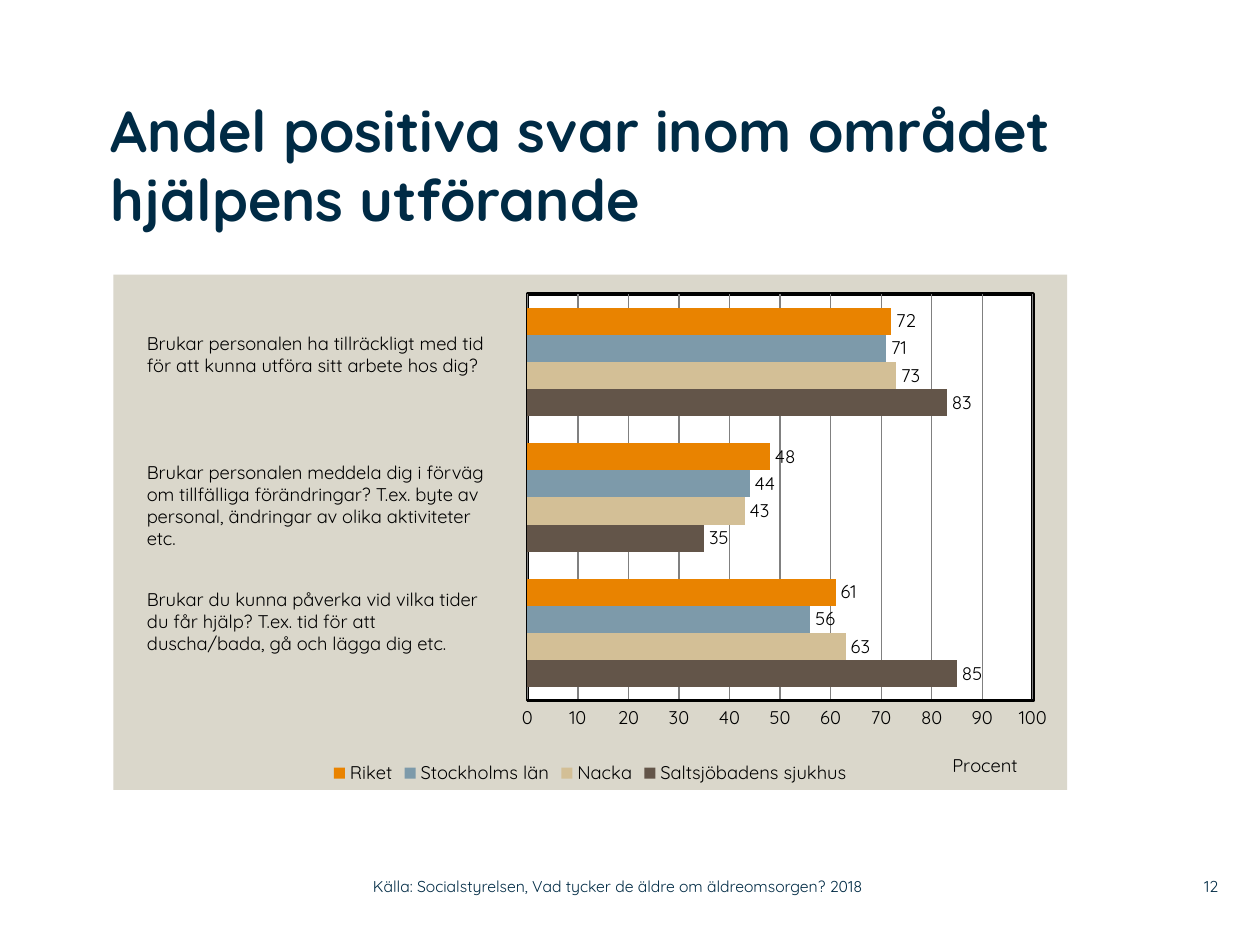
from lxml import etree
from pptx import Presentation
from pptx.chart.data import CategoryChartData
from pptx.dml.color import RGBColor
from pptx.enum.chart import XL_CHART_TYPE as ChartType, XL_LABEL_POSITION as LabelPosition
from pptx.enum.chart import XL_LEGEND_POSITION as LegendPosition, XL_TICK_MARK as TickMark
from pptx.enum.text import MSO_ANCHOR as Anchor, PP_ALIGN as Align
from pptx.oxml import parse_xml
from pptx.oxml.ns import nsdecls, qn
from pptx.util import Inches, Pt

FONT = "Quicksand"
NAVY = RGBColor(0x00, 0x2B, 0x45)
BLACK = RGBColor(0x00, 0x00, 0x00)
GREY = RGBColor(0x80, 0x80, 0x80)
WHITE = RGBColor(0xFF, 0xFF, 0xFF)
PANEL = RGBColor(0xDA, 0xD7, 0xCB)

TITLE_BOX = (0.88, 0.75, 7.6, 1.42)
CHART_BOX = (0.9, 2.18, 7.57, 4.09)
FOOTER_TOP, FOOTER_HEIGHT = 6.89, 0.29

SERIES = [
    ("Saltsjöbadens sjukhus", (85, 35, 83), RGBColor(0x63, 0x55, 0x49)),
    ("Nacka", (63, 43, 73), RGBColor(0xD3, 0xBF, 0x96)),
    ("Stockholms län", (56, 44, 71), RGBColor(0x7D, 0x9A, 0xAA)),
    ("Riket", (61, 48, 72), RGBColor(0xE9, 0x83, 0x00)),
]
# Each question: share of the chart height, box height in inches, paragraphs
QUESTIONS = [
    (0.1, 0.45, ["Brukar personalen ha tillräckligt med tid",
                 "för att kunna utföra sitt arbete hos dig?"]),
    (0.35, 0.81, ["Brukar personalen meddela dig i förväg om tillfälliga förändringar? "
                  "T.ex. byte av personal, ändringar av olika aktiviteter etc."]),
    (0.596, 0.63, ["Brukar du kunna påverka vid vilka tider",
                   "du får hjälp? T.ex. tid för att",
                   "duscha/bada, gå och lägga dig etc."]),
]


def set_font(font, size, color, bold=False):
    font.name, font.size, font.bold = FONT, Pt(size), bold
    font.color.rgb = color


def add_text(page, box, lines, size, color, bold=False, inset=(0, 0),
             anchor=Anchor.TOP, align=Align.LEFT):
    frame = page.shapes.add_textbox(*map(Inches, box)).text_frame
    frame.word_wrap = True
    frame.vertical_anchor = anchor
    frame.margin_left = frame.margin_right = Inches(inset[0])
    frame.margin_top = frame.margin_bottom = Inches(inset[1])
    frame.text = "\n".join(lines)
    for para in frame.paragraphs:
        para.alignment = align
        for span in para.runs:
            set_font(span.font, size, color, bold)


def manual_layout(x, y, width=None, height=None):
    """Layout element whose lengths are shares of the chart's size."""
    parts = [("xMode", "edge"), ("yMode", "edge"), ("x", x), ("y", y)]
    if width:
        parts = [("layoutTarget", "inner"), *parts, ("w", width), ("h", height)]
    body = "".join(f'<c:{name} val="{value}"/>' for name, value in parts)
    return parse_xml(f'<c:layout {nsdecls("c")}><c:manualLayout>{body}'
                     '</c:manualLayout></c:layout>')


def replace_layout(parent, layout, position):
    for old in parent.findall(qn("c:layout")):
        parent.remove(old)
    parent.insert(position, layout)


def area_format(fill, line=None):
    """Fill and outline for the chart or plot area."""
    outline = (f'<a:ln w="{Pt(2)}"><a:solidFill><a:srgbClr val="{line}"/></a:solidFill></a:ln>'
               if line else "<a:ln><a:noFill/></a:ln>")
    return parse_xml(f'<c:spPr {nsdecls("c", "a")}><a:solidFill><a:srgbClr val="{fill}"/>'
                     f'</a:solidFill>{outline}</c:spPr>')


def style_axes(chart):
    chart.category_axis.visible = False
    axis = chart.value_axis
    axis.minimum_scale, axis.maximum_scale, axis.major_unit = 0, 100, 10
    axis.major_tick_mark = axis.minor_tick_mark = TickMark.NONE
    axis.format.line.color.rgb = BLACK
    axis.format.line.width = Pt(2)
    axis.major_gridlines.format.line.color.rgb = GREY
    axis.major_gridlines.format.line.width = Pt(0.75)
    set_font(axis.tick_labels.font, 10.5, BLACK)
    title = axis.axis_title
    title.text_frame.text = "Procent"
    set_font(title.text_frame.paragraphs[0].runs[0].font, 10.5, BLACK)
    replace_layout(title._element, manual_layout(0.876, 0.92), 1)


def style_series(plot):
    plot.gap_width, plot.overlap = 100, 0
    plot.vary_by_categories = False
    for series, (_, _, color) in zip(plot.series, SERIES):
        series.format.fill.solid()
        series.format.fill.fore_color.rgb = color
        labels = series.data_labels
        labels.show_value = True
        labels.position = LabelPosition.OUTSIDE_END
        set_font(labels.font, 10.5, BLACK)


def add_answer_chart(page, box):
    data = CategoryChartData()
    data.categories = ["1", "2", "3"]
    for name, values, _ in SERIES:
        data.add_series(name, values)
    chart = page.shapes.add_chart(ChartType.BAR_CLUSTERED, *map(Inches, box), data).chart
    set_font(chart.font, 10.5, BLACK)
    chart.has_title = False
    chart.has_legend = True
    chart.legend.position = LegendPosition.BOTTOM
    chart.legend.include_in_layout = False
    set_font(chart.legend.font, 10.5, BLACK)
    style_axes(chart)
    style_series(chart.plots[0])

    chart_space = chart._chartSpace
    plot_area = chart_space.chart.plotArea
    replace_layout(plot_area, manual_layout(0.434, 0.038, 0.53, 0.789), 0)
    plot_area.append(area_format(WHITE, BLACK))
    chart_space.chart.addnext(area_format(PANEL))


def add_questions(page, box):
    left, top, width, height = box
    for share, box_height, lines in QUESTIONS:
        place = (left + 0.022 * width, top + share * height, 0.395 * width, box_height)
        add_text(page, place, lines, 10.5, BLACK, inset=(0.1, 0.05))


def add_footer(page, top, height):
    add_text(page, (2.96, top, 4.43, height),
             ["Källa: Socialstyrelsen, Vad tycker de äldre om äldreomsorgen? 2018"],
             9, NAVY, anchor=Anchor.MIDDLE)
    add_text(page, (9.2, top, 0.47, height), ["12"], 9, NAVY,
             anchor=Anchor.MIDDLE, align=Align.RIGHT)


def main():
    deck = Presentation()
    deck.slide_width, deck.slide_height = Inches(10), Inches(7.5)
    page = deck.slides.add_slide(deck.slide_layouts[6])
    add_answer_chart(page, CHART_BOX)
    add_text(page, TITLE_BOX, ["Andel positiva svar inom området hjälpens utförande"],
             33, NAVY, bold=True)
    add_questions(page, CHART_BOX)
    add_footer(page, FOOTER_TOP, FOOTER_HEIGHT)
    deck.save("out.pptx")


if __name__ == "__main__":
    main()
